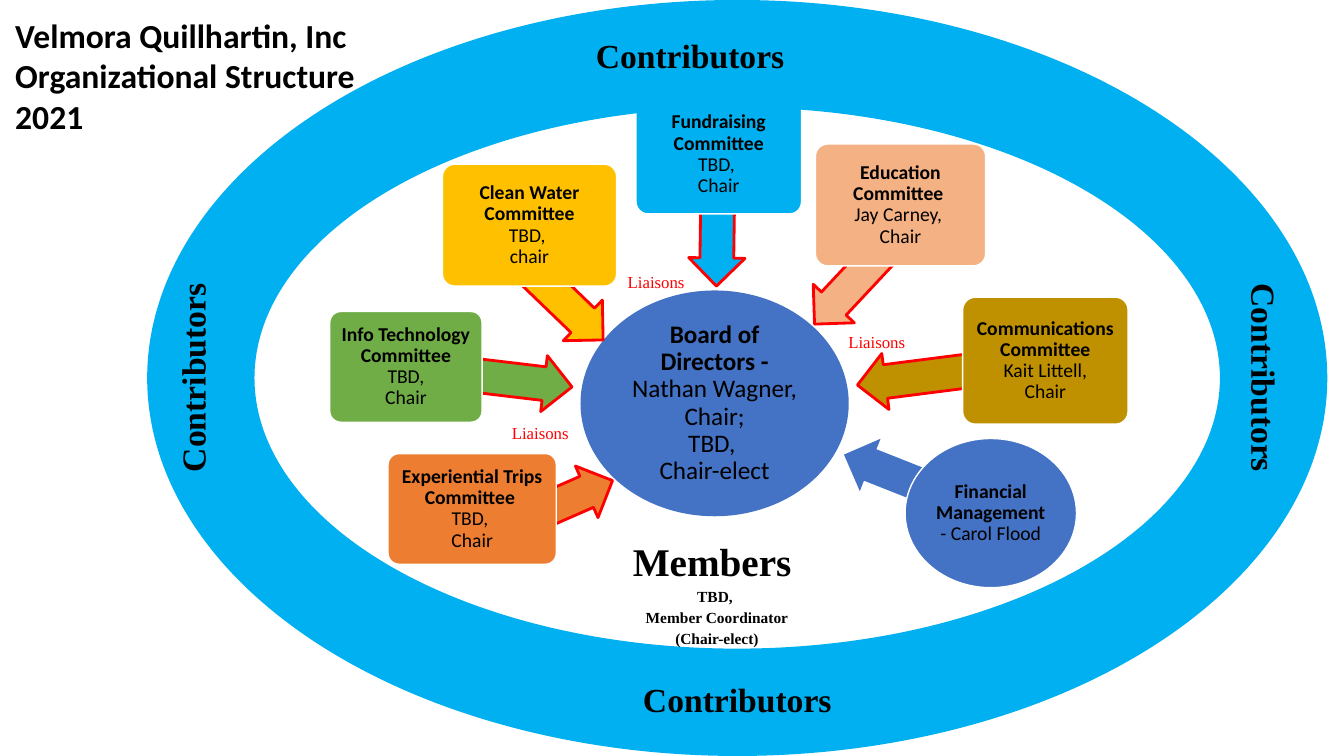
from pptx import Presentation
from pptx import util as u
from pptx.dml.color import RGBColor
from pptx.enum import shapes, text

COLORS = {
    "black": "000000", "white": "FFFFFF", "red": "FF0000", "blue": "4472C4",
    "sky": "00B0F0", "orange": "ED7D31", "green": "70AD47", "gold": "FFC000",
    "peach": "F4B183", "olive": "BF9000",
}
ARROW_HEIGHT = 1.42
SANS, SERIF = "Calibri", "Times New Roman"
ROUNDED, OVAL = shapes.MSO_SHAPE.ROUNDED_RECTANGLE, shapes.MSO_SHAPE.OVAL

# Heading, remaining lines, colour, box (cm), arrow left, top, length (cm), angle
COMMITTEES = [
    ("Experiential Trips Committee ", ["TBD, ", "Chair"], "orange",
     (9.78, 11.43, 4.24, 2.79), (12.37, 12.04, 3.2, 156.4)),
    ("Info Technology Committee", ["TBD,", "Chair"], "green",
     (8.31, 7.85, 3.84, 2.79), (10.21, 8.79, 4.22, 186.8)),
    ("Clean Water Committee", ["TBD, ", "chair"], "gold",
     (11.15, 4.14, 4.39, 3.07), (12.73, 6.86, 2.87, 223.9)),
    ("Fundraising Committee", ["TBD, ", "Chair"], "sky",
     (16.03, 2.39, 4.17, 3), (16.38, 4.8, 3.4, 270.8)),
    ("Education Committee ", ["Jay Carney, ", "Chair"], "peach",
     (20.55, 3.63, 4.29, 3.07), (19.96, 6.15, 3.58, 313.1)),
    ("Communications Committee", ["Kait Littell,", "Chair"], "olive",
     (24.26, 7.49, 4.17, 3.2), (21.59, 8.69, 4.78, 352.7)),
]
# Position (cm) and text direction
CONTRIBUTORS = [
    ((14.66, 0.61, 5.46, 1.37), "horz"),
    ((15.67, 16.84, 5.82, 1.47), "horz"),
    ((4.06, 6.65, 1.7, 5.74), "vert270"),
    ((31.09, 6.65, 1.57, 5.74), "vert"),
]
LIAISONS = [(21.13, 8.15), (15.57, 6.65), (12.65, 10.44)]


def rgb(name):
    return RGBColor.from_string(COLORS[name])


def lengths(box):
    return [u.Cm(value) for value in box]


def add_filled_shape(slide, kind, box, fill, line=None, width=1):
    shape = slide.shapes.add_shape(kind, *lengths(box))
    shape.shadow.inherit = False
    shape.fill.solid()
    shape.fill.fore_color.rgb = rgb(fill)
    if line:
        shape.line.color.rgb = rgb(line)
        shape.line.width = u.Pt(width)
    else:
        shape.line.fill.background()
    return shape


def write_paragraphs(frame, paragraphs, font, align, spacing, color="black", after=0):
    """Each paragraph is a size and a list of (words, bold) runs."""
    frame.word_wrap = True
    for index, (size, runs) in enumerate(paragraphs):
        paragraph = frame.add_paragraph() if index else frame.paragraphs[0]
        paragraph.alignment = align
        paragraph.line_spacing = spacing
        paragraph.space_before = u.Pt(0)
        paragraph.space_after = u.Pt(after)
        paragraph.font.name = font
        paragraph.font.size = u.Pt(size)
        paragraph.font.color.rgb = rgb(color)
        if len(runs) == 1:
            paragraph.font.bold = runs[0][1]
        for words, bold in runs:
            run = paragraph.add_run()
            run.text = words
            if len(runs) > 1:
                run.font.bold = bold


def add_node(slide, kind, box, fill, line, paragraphs, margin):
    shape = add_filled_shape(slide, kind, box, fill, line)
    if kind == ROUNDED:
        shape.adjustments[0] = 0.1
    frame = shape.text_frame
    frame.margin_left = frame.margin_right = u.Cm(margin)
    frame.margin_top = frame.margin_bottom = u.Cm(margin)
    frame.vertical_anchor = text.MSO_ANCHOR.MIDDLE
    write_paragraphs(frame, paragraphs, SANS, text.PP_ALIGN.CENTER, 0.9)


def add_arrow(slide, left, top, length, angle, fill, line=None):
    arrow = add_filled_shape(slide, shapes.MSO_SHAPE.LEFT_ARROW,
                             (left, top, length, ARROW_HEIGHT), fill, line, 2)
    arrow.adjustments[0] = 0.6
    arrow.adjustments[1] = 0.5
    arrow.rotation = angle


def add_label(slide, box, paragraphs, align=text.PP_ALIGN.CENTER, color="black",
              after=0, direction="horz"):
    frame = slide.shapes.add_textbox(*lengths(box)).text_frame
    frame._txBody.bodyPr.set("vert", direction)
    write_paragraphs(frame, paragraphs, SERIF, align, 1.15, color, after)


def set_title(slide, box, lines):
    title = slide.shapes.title
    title.left, title.top, title.width, title.height = lengths(box)
    frame = title.text_frame
    frame.auto_size = text.MSO_AUTO_SIZE.NONE
    frame.vertical_anchor = text.MSO_ANCHOR.TOP
    write_paragraphs(frame, [(24, [(line, True)]) for line in lines],
                     SANS, text.PP_ALIGN.LEFT, 1)


def main():
    presentation = Presentation()
    presentation.slide_width, presentation.slide_height = u.Cm(33.87), u.Cm(19.05)
    slide = presentation.slides.add_slide(presentation.slide_layouts[5])
    set_title(slide, (0.13, 0.25, 9.17, 3.33),
              ["Velmora Quillhartin, Inc", "Organizational Structure", "2021"])

    # Board at the centre
    board = [[("Board of Directors -", True), (" Nathan Wagner, Chair;", False)],
             [("TBD, ", False)], [("Chair-elect", False)]]
    add_node(slide, OVAL, (14.63, 7.32, 6.76, 5.69), "blue", None,
             [(18, runs) for runs in board], 0.03)

    # Committees pointing to the board
    for heading, lines, color, box, arrow in COMMITTEES:
        add_arrow(slide, *arrow, color, "red")
        paragraphs = [(14, [(heading, True)])]
        paragraphs += [(14, [(line, False)]) for line in lines]
        add_node(slide, ROUNDED, box, color, "white", paragraphs, 0.08)

    # Financial management
    add_arrow(slide, 21.13, 11.48, 3.99, 21.6, "blue")
    add_node(slide, OVAL, (22.81, 11.05, 4.32, 3.76), "blue", "white",
             [(14, [("Financial Management ", True), ("- Carol Flood", False)])], 0.08)

    # Ring of contributors
    ring = add_filled_shape(slide, shapes.MSO_SHAPE.DONUT, (3.71, 0, 29.74, 19.05), "sky")
    ring.adjustments[0] = 0.142
    for box, direction in CONTRIBUTORS:
        add_label(slide, box, [(24, [("Contributors", True)])],
                  after=10, direction=direction)

    # Members and liaisons
    details = ["TBD, ", "Member Coordinator", "(Chair-elect)"]
    add_label(slide, (15.34, 13.23, 5.46, 2.49),
              [(28, [("Members ", True)])] + [(11, [(line, True)]) for line in details])
    for left, top in LIAISONS:
        add_label(slide, (left, top, 2.03, 0.81), [(12, [("Liaisons", False)])],
                  text.PP_ALIGN.LEFT, "red", 10)

    presentation.save("out.pptx")


if __name__ == "__main__":
    main()
